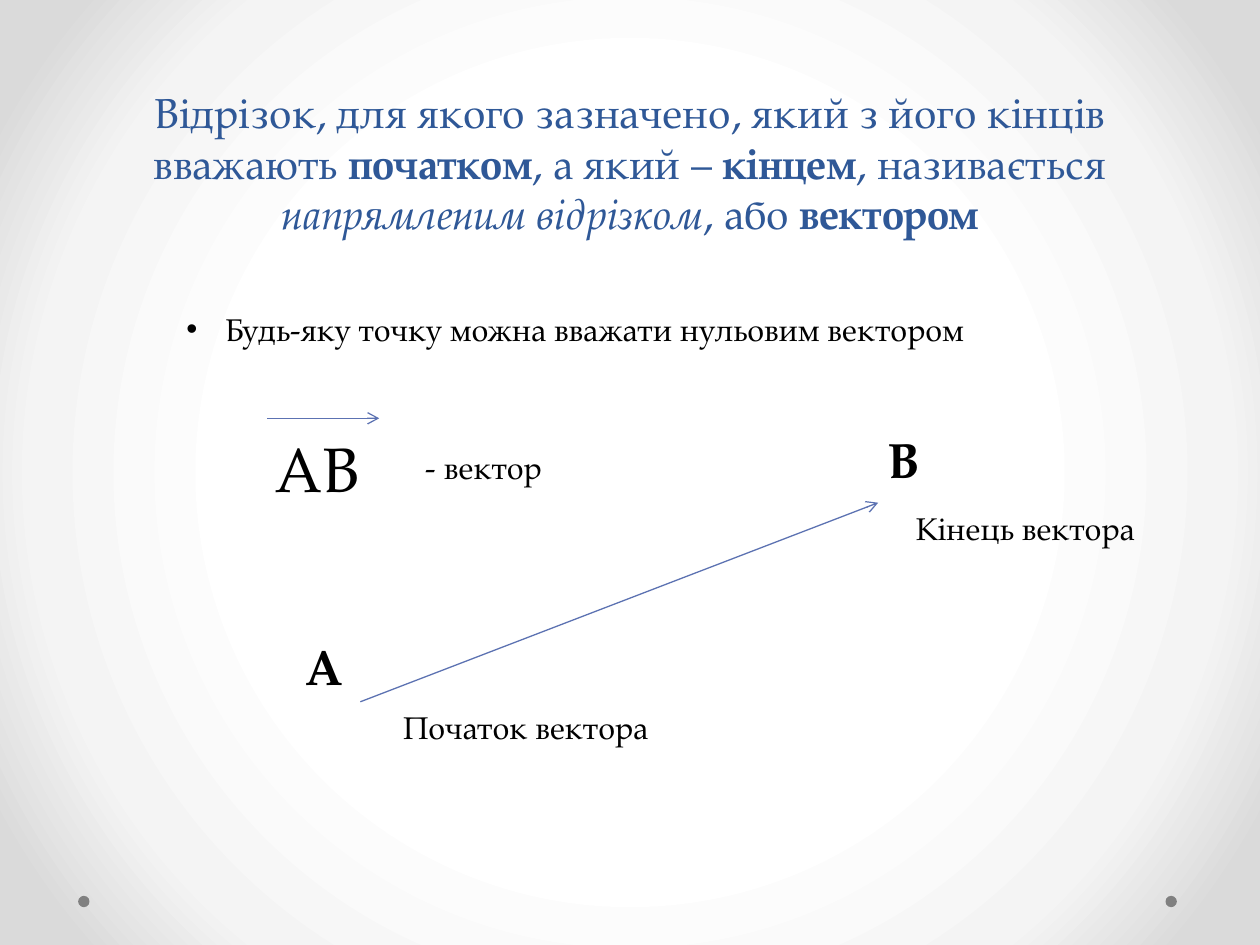
from lxml import etree
from pptx import Presentation
from pptx.dml.color import RGBColor
from pptx.enum.shapes import MSO_CONNECTOR, MSO_SHAPE
from pptx.enum.text import MSO_ANCHOR, MSO_AUTO_SIZE, PP_ALIGN
from pptx.oxml import parse_xml
from pptx.oxml.ns import nsdecls, qn
from pptx.util import Inches, Pt

LEFT, CENTER = PP_ALIGN.LEFT, PP_ALIGN.CENTER
BOTTOM = MSO_ANCHOR.BOTTOM
FIT_SHAPE, NO_FIT = MSO_AUTO_SIZE.SHAPE_TO_FIT_TEXT, MSO_AUTO_SIZE.NONE
STRAIGHT, OVAL = MSO_CONNECTOR.STRAIGHT, MSO_SHAPE.OVAL

FONT = "TeX Gyre Pagella"
COLORS = {"title": "2F5897", "text": "000000", "arrow": "5C72B2", "dot": "808080"}
BACKGROUND_STOPS = [(50, "FFFFFF"), (76, "F4F4F4"), (92, "DADADA")]

TITLE_BOX = (0.75, 0.21, 8.5, 1.73)
TITLE_RUNS = [
    ("Відрізок, для якого зазначено, який з його кінців вважають ", False, False),
    ("початком", True, False),
    (", а який – ", False, False),
    ("кінцем", True, False),
    (", називається ", False, False),
    ("напрямленим відрізком", False, True),
    (", або ", False, False),
    ("вектором", True, False),
]
LABELS = [
    ("А", (2.09, 5, 0.96, 0.57), 28, True, CENTER, True),
    ("В", (6.81, 3.36, 0.72, 0.57), 28, True, CENTER, True),
    ("Початок вектора", (3.1, 5.57, 2.29, 0.4), 18, False, LEFT, True),
    ("Кінець вектора", (7.17, 3.99, 2.2, 0.4), 18, False, LEFT, True),
    ("АВ", (2.09, 3.36, 1.17, 0.71), 36, False, LEFT, True),
    ("- вектор", (3.28, 3.51, 1.13, 0.4), 18, False, LEFT, False),
]
NOTE = ("Будь-яку точку можна вважати нульовим вектором",
        (1.38, 2.41, 6.65, 0.4), 18, False, LEFT, True)
ARROWS = [(2.86, 5.57, 6.97, 3.99), (2.12, 3.32, 3.01, 3.32)]
DOT_LEFTS, DOT_TOP, DOT_SIZE = (9.25, 0.62), 7.11, 0.09


def color(name):
    return RGBColor.from_string(COLORS[name])


def style(font, size, color_name, bold=False, italic=False):
    font.name, font.size = FONT, Pt(size)
    font.bold, font.italic = bold, italic
    font.color.rgb = color(color_name)


def paint_background(slide):
    fill = slide.background.fill
    fill.solid()
    stops = "".join(
        f'<a:gs pos="{position * 1000}"><a:srgbClr val="{value}"/></a:gs>'
        for position, value in BACKGROUND_STOPS)
    gradient = parse_xml(
        f'<a:gradFill {nsdecls("a")} rotWithShape="1"><a:gsLst>{stops}</a:gsLst>'
        '<a:path path="circle"><a:fillToRect l="50000" t="50000" r="50000" b="50000"/>'
        '</a:path></a:gradFill>')
    solid = next(slide.element.iter(qn("a:solidFill")))
    solid.getparent().replace(solid, gradient)


def add_dot(slide, left):
    dot = slide.shapes.add_shape(OVAL, *map(Inches, (left, DOT_TOP, DOT_SIZE, DOT_SIZE)))
    dot.shadow.inherit = False
    dot.fill.solid()
    dot.fill.fore_color.rgb = color("dot")
    dot.line.fill.background()


def fill_title(slide):
    title = slide.shapes.title
    title.left, title.top, title.width, title.height = map(Inches, TITLE_BOX)
    frame = title.text_frame
    frame.auto_size, frame.vertical_anchor = NO_FIT, BOTTOM
    paragraph = frame.paragraphs[0]
    paragraph.alignment = CENTER
    for text, bold, italic in TITLE_RUNS:
        run = paragraph.add_run()
        run.text = text
        style(run.font, 24, "title", bold, italic)


def add_label(slide, text, box, size, bold, alignment, wrap):
    frame = slide.shapes.add_textbox(*map(Inches, box)).text_frame
    frame.word_wrap, frame.auto_size = wrap, FIT_SHAPE
    frame.text = text
    paragraph = frame.paragraphs[0]
    paragraph.alignment = alignment
    style(paragraph.runs[0].font, size, "text", bold)
    return paragraph


def add_bullet(paragraph):
    properties = paragraph._p.get_or_add_pPr()
    properties.set("marL", str(Inches(0.31)))
    properties.set("indent", str(-Inches(0.31)))
    etree.SubElement(properties, qn("a:buFont"), typeface="Arial")
    etree.SubElement(properties, qn("a:buChar"), char="•")


def add_arrow(slide, points):
    arrow = slide.shapes.add_connector(STRAIGHT, *map(Inches, points))
    arrow.line.color.rgb = color("arrow")
    arrow.line.width = Pt(0.75)
    etree.SubElement(arrow.line._get_or_add_ln(), qn("a:tailEnd"), type="arrow")
    etree.SubElement(arrow._element.spPr, qn("a:effectLst"))


def main():
    presentation = Presentation()
    presentation.slide_width, presentation.slide_height = Inches(10), Inches(7.5)
    slide = presentation.slides.add_slide(presentation.slide_layouts[5])
    paint_background(slide)
    for left in DOT_LEFTS:
        add_dot(slide, left)
    fill_title(slide)
    for points in ARROWS:
        add_arrow(slide, points)
    for label in LABELS:
        add_label(slide, *label)
    add_bullet(add_label(slide, *NOTE))
    presentation.save("out.pptx")


if __name__ == "__main__":
    main()
